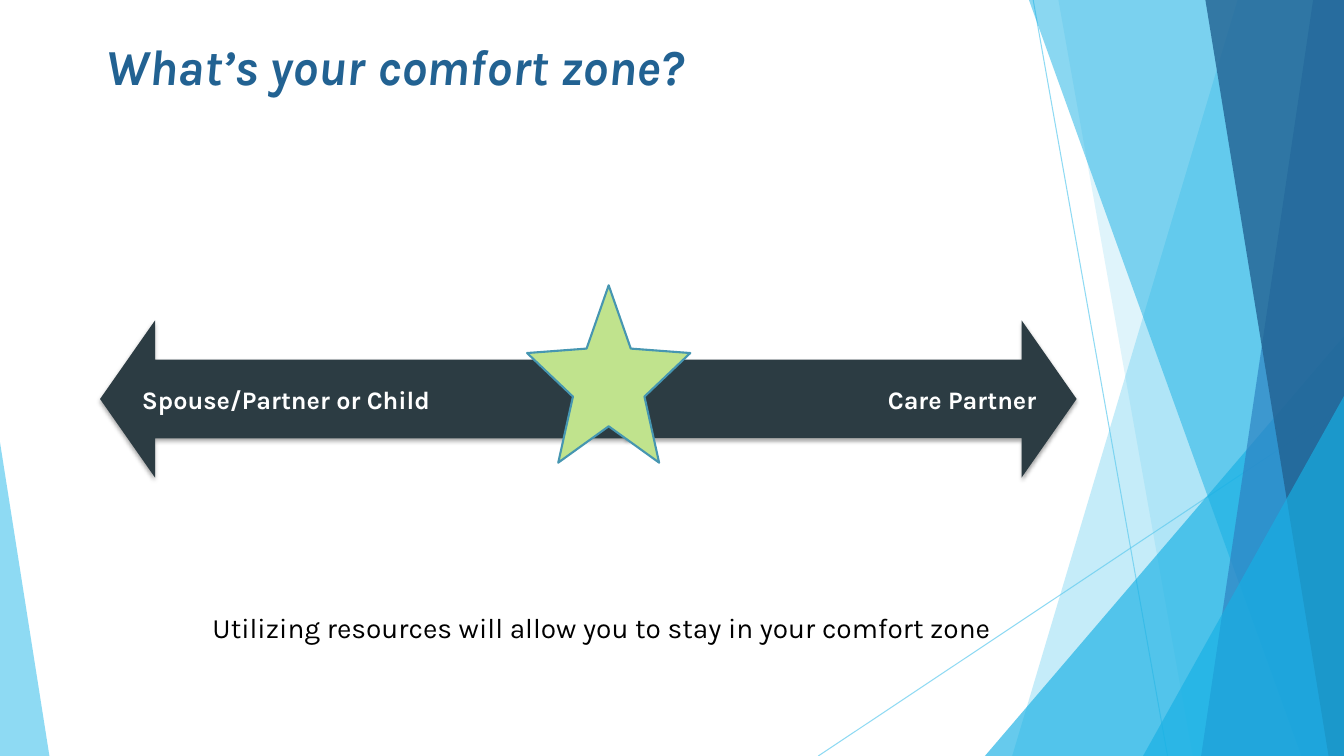
from dataclasses import dataclass

from lxml import etree
from pptx import Presentation
from pptx.dml.color import RGBColor
from pptx.enum.shapes import MSO_CONNECTOR, MSO_SHAPE
from pptx.enum.text import MSO_ANCHOR, PP_ALIGN
from pptx.oxml.ns import qn
from pptx.shapes.autoshape import Shape
from pptx.slide import Slide
from pptx.util import Pt

TRIANGLE = MSO_SHAPE.ISOSCELES_TRIANGLE
UP_ARROW = MSO_SHAPE.UP_ARROW
STAR = MSO_SHAPE.STAR_5_POINT
STRAIGHT = MSO_CONNECTOR.STRAIGHT
TOP, MIDDLE = MSO_ANCHOR.TOP, MSO_ANCHOR.MIDDLE
LEFT, RIGHT = PP_ALIGN.LEFT, PP_ALIGN.RIGHT

SKY = RGBColor(0x5F, 0xCB, 0xEF)
CYAN = RGBColor(0x17, 0xB0, 0xE4)
BLUE = RGBColor(0x2E, 0x83, 0xC3)
NAVY = RGBColor(0x22, 0x62, 0x92)
SLATE = RGBColor(0x2C, 0x3C, 0x43)
LIME = RGBColor(0xC0, 0xE3, 0x8D)
TEAL = RGBColor(0x46, 0x96, 0xB1)
WHITE = RGBColor(0xFF, 0xFF, 0xFF)
BLACK = RGBColor(0, 0, 0)

FONT = "Karla"
WIDTH, HEIGHT = 960, 540
ARROW_MIDDLE = 285
ARROW_BREADTH = 112.3


@dataclass(frozen=True)
class Ray:
    start: tuple[float, float]
    end: tuple[float, float]


@dataclass(frozen=True)
class Band:
    """Area from a slanted left edge to the right side of the slide."""
    top_x: float
    bottom_x: float
    color: RGBColor
    opacity: int


@dataclass(frozen=True)
class Wedge:
    """Triangle standing on the bottom of the slide."""
    left: float
    top: float
    width: float
    apex: float
    color: RGBColor
    opacity: int


@dataclass(frozen=True)
class Arrow:
    left: float
    length: float
    rotation: int


@dataclass(frozen=True)
class Label:
    text: str
    left: float
    top: float
    width: float
    height: float
    size: int
    color: RGBColor
    bold: bool = False
    italic: bool = False
    align: PP_ALIGN = LEFT
    anchor: MSO_ANCHOR = TOP
    side_inset: float = 7.2


RAYS = [Ray((738, 0), (834, HEIGHT)), Ray((WIDTH, 290), (584.5, HEIGHT))]
FACETS = [
    Band(884, 723, SKY, 36),
    Band(756, 852, SKY, 20),
    Wedge(703.5, 240, 256.5, 1, CYAN, 66),
    Band(735, 929.5, CYAN, 50),
    Band(938, 858, BLUE, 70),
    Band(861, 949, NAVY, 80),
    Wedge(816.5, 283, 143.5, 1, CYAN, 66),
    Wedge(0, 316, 35.3, 0, SKY, 70),
]
ARROWS = [Arrow(71.5, 380, 270), Arrow(447, 322, 90)]
LABELS = [
    Label("What’s your comfort zone?", 68.4, 21.6, 732, 90, 36, NAVY,
          bold=True, italic=True),
    Label("Spouse/Partner or Child", 91.4, 257, 360, 56, 18, WHITE,
          bold=True, anchor=MIDDLE, side_inset=10),
    Label("Care Partner", 446.4, 257, 302.4, 56, 18, WHITE,
          bold=True, align=RIGHT, anchor=MIDDLE, side_inset=8.6),
    Label("Utilizing resources will allow you to stay in your comfort zone",
          144.7, 432.7, 592.6, 53, 20, BLACK),
]


def set_opacity(properties: etree._Element, percent: int) -> None:
    for color in properties.iter(qn("a:srgbClr")):
        etree.SubElement(color, qn("a:alpha"), val=str(percent * 1000))


def paint(shape: Shape, color: RGBColor, opacity: int = 100) -> None:
    shape.fill.solid()
    shape.fill.fore_color.rgb = color
    shape.line.fill.background()
    shape.shadow.inherit = False
    if opacity < 100:
        set_opacity(shape._element.spPr, opacity)


def draw_ray(page: Slide, ray: Ray) -> None:
    line = page.shapes.add_connector(
        STRAIGHT, *(Pt(value) for value in ray.start + ray.end))
    line.line.color.rgb = SKY
    line.line.width = Pt(0.75)
    properties = line._element.spPr
    set_opacity(properties, 70)
    etree.SubElement(properties, qn("a:effectLst"))


def draw_band(page: Slide, band: Band) -> None:
    builder = page.shapes.build_freeform(Pt(band.top_x), 0)
    corners = [(WIDTH, 0), (WIDTH, HEIGHT), (band.bottom_x, HEIGHT)]
    builder.add_line_segments([(Pt(x), Pt(y)) for x, y in corners], close=True)
    paint(builder.convert_to_shape(), band.color, band.opacity)


def draw_wedge(page: Slide, wedge: Wedge) -> None:
    triangle = page.shapes.add_shape(
        TRIANGLE, Pt(wedge.left), Pt(wedge.top),
        Pt(wedge.width), Pt(HEIGHT - wedge.top))
    triangle.adjustments[0] = wedge.apex
    paint(triangle, wedge.color, wedge.opacity)


def draw_arrow(page: Slide, arrow: Arrow) -> None:
    """Draw an upward arrow turned on its side about its centre."""
    center = arrow.left + arrow.length / 2
    shape = page.shapes.add_shape(
        UP_ARROW, Pt(center - ARROW_BREADTH / 2),
        Pt(ARROW_MIDDLE - arrow.length / 2),
        Pt(ARROW_BREADTH), Pt(arrow.length))
    shape.adjustments[0] = 0.5
    shape.adjustments[1] = 0.35
    shape.rotation = arrow.rotation
    paint(shape, SLATE)
    effects = shape._element.spPr.find(qn("a:effectLst"))
    shadow = etree.SubElement(
        effects, qn("a:outerShdw"), blurRad=str(Pt(3)), dist=str(Pt(2)),
        dir=str(90 * 60000), rotWithShape="0")
    etree.SubElement(shadow, qn("a:srgbClr"), val=str(BLACK))
    set_opacity(shadow, 35)


def draw_star(page: Slide) -> None:
    star = page.shapes.add_shape(STAR, Pt(376.5), Pt(203.8), Pt(116.6), Pt(126.7))
    star.adjustments[0] = 0.219
    paint(star, LIME)
    star.line.color.rgb = TEAL
    star.line.width = Pt(1.5)


def draw_label(page: Slide, label: Label) -> None:
    box = page.shapes.add_textbox(
        Pt(label.left), Pt(label.top), Pt(label.width), Pt(label.height))
    frame = box.text_frame
    frame.word_wrap = True
    frame.vertical_anchor = label.anchor
    frame.margin_left = frame.margin_right = Pt(label.side_inset)
    frame.text = label.text
    para = frame.paragraphs[0]
    para.alignment = label.align
    font = para.runs[0].font
    font.name = FONT
    font.size = Pt(label.size)
    font.bold = label.bold
    font.italic = label.italic
    font.color.rgb = label.color


def main() -> None:
    deck = Presentation()
    deck.slide_width, deck.slide_height = Pt(WIDTH), Pt(HEIGHT)
    page = deck.slides.add_slide(deck.slide_layouts[6])
    for ray in RAYS:
        draw_ray(page, ray)
    for facet in FACETS:
        if isinstance(facet, Band):
            draw_band(page, facet)
        else:
            draw_wedge(page, facet)
    for arrow in ARROWS:
        draw_arrow(page, arrow)
    draw_star(page)
    for label in LABELS:
        draw_label(page, label)
    deck.save("out.pptx")


if __name__ == "__main__":
    main()
